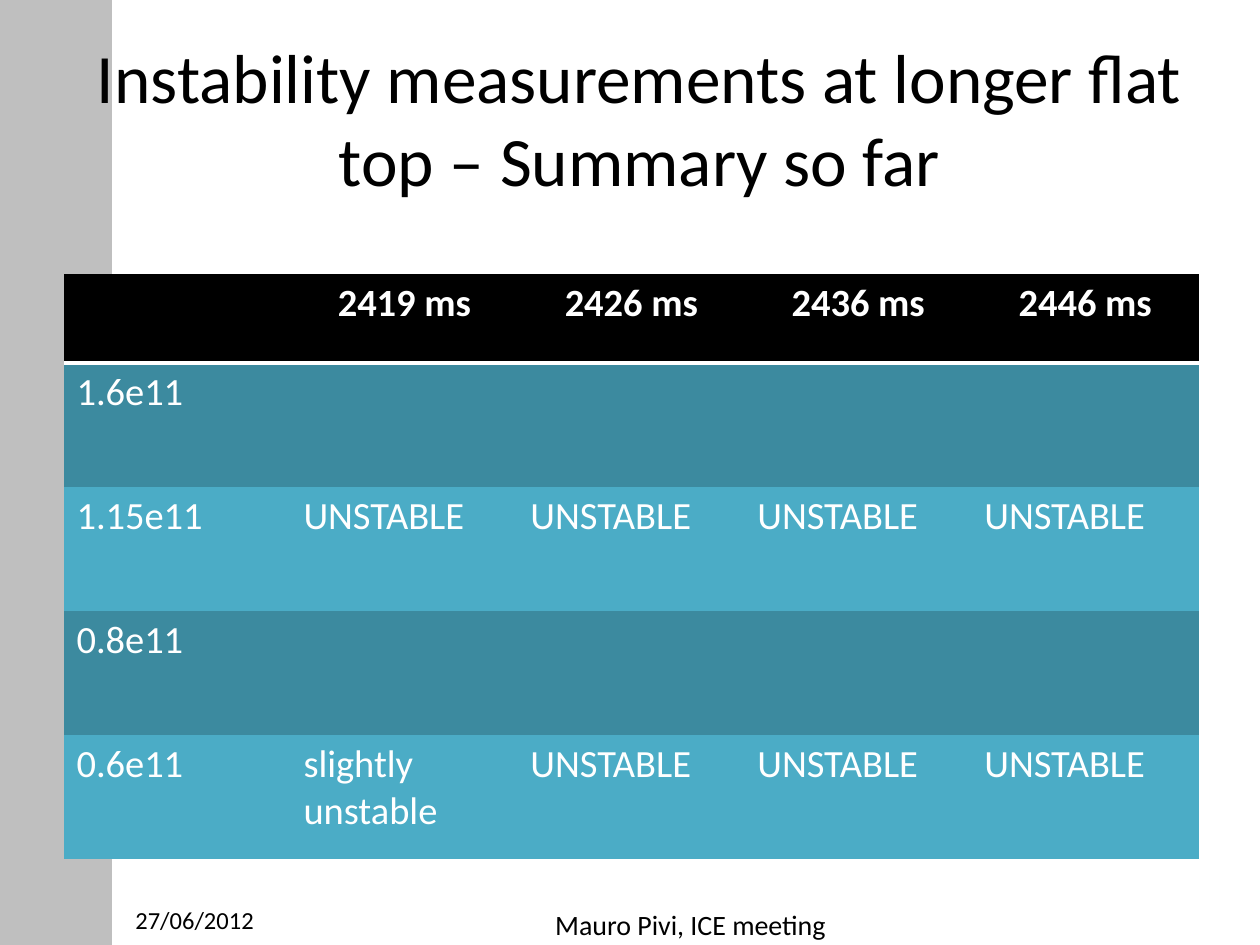
from lxml import etree
from pptx import Presentation
from pptx import util as u
from pptx.dml.color import RGBColor
from pptx.enum import shapes, text
from pptx.oxml.ns import qn

PX = u.Inches(1) // 126
COLORS = {"ink": "000000", "paper": "FFFFFF", "band": "BFBFBF",
          "dark": "3C8A9F", "light": "4BACC6"}
NO_GRID = "{2D5ABB26-0587-4C30-8999-92F81FD0307C}"
LEFT, CENTER = text.PP_ALIGN.LEFT, text.PP_ALIGN.CENTER


def rgb(name):
    return RGBColor.from_string(COLORS[name])


def write(tf, content, size=22, color="ink", bold=False, align=LEFT):
    p = tf.paragraphs[0]
    p.alignment = align
    r = p.add_run()
    r.text = content
    r.font.name = "Calibri"
    r.font.size = u.Pt(size)
    r.font.bold = bold
    r.font.color.rgb = rgb(color)


class Deck:
    def __init__(self, width, height):
        self.prs = Presentation()
        self.prs.slide_width, self.prs.slide_height = width * PX, height * PX
        self.s = self.prs.slides.add_slide(self.prs.slide_layouts[6])

    def rect(self, *box, fill):
        sp = self.s.shapes.add_shape(shapes.MSO_SHAPE.RECTANGLE, *(v * PX for v in box))
        sp.shadow.inherit = False
        sp.fill.solid()
        sp.fill.fore_color.rgb = rgb(fill)
        sp.line.fill.background()

    def label(self, *box, content, **style):
        tf = self.s.shapes.add_textbox(*(v * PX for v in box)).text_frame
        tf.word_wrap = True
        tf.vertical_anchor = text.MSO_ANCHOR.MIDDLE
        write(tf, content, **style)

    def bottom_border(self, cell, color, width):
        ln = etree.Element(qn("a:lnB"), w=str(u.Pt(width)))
        fill = etree.SubElement(ln, qn("a:solidFill"))
        etree.SubElement(fill, qn("a:srgbClr"), val=COLORS[color])
        cell._tc.get_or_add_tcPr().insert(0, ln)

    def table(self, left, top, rows, col_width, heights):
        frame = self.s.shapes.add_table(len(rows), len(rows[0]), left * PX, top * PX,
                                        col_width * len(rows[0]) * PX, sum(heights) * PX)
        next(frame.element.iter(qn("a:tableStyleId"))).text = NO_GRID
        table = frame.table
        for col in table.columns:
            col.width = col_width * PX
        for i, row in enumerate(rows):
            table.rows[i].height = heights[i] * PX
            header = i == 0
            fill = "ink" if header else ("light", "dark")[i % 2]
            for j, content in enumerate(row):
                cell = table.cell(i, j)
                cell.fill.solid()
                cell.fill.fore_color.rgb = rgb(fill)
                if header:
                    self.bottom_border(cell, "paper", 2)
                if content:
                    write(cell.text_frame, content, color="paper", bold=header,
                          align=CENTER if header else LEFT)


def main():
    deck = Deck(1260, 945)

    # Side band and title
    deck.rect(0, 0, 112, 945, fill="band")
    deck.label(63, 38, 1153, 158, size=39.6, align=CENTER,
               content="Instability measurements at longer flat top – Summary so far")

    # Stability by intensity (rows) and time (columns)
    blank, unstable = [""] * 4, ["UNSTABLE"] * 4
    rows = [
        ["", "2419 ms", "2426 ms", "2436 ms", "2446 ms"],
        ["1.6e11", *blank],
        ["1.15e11", *unstable],
        ["0.8e11", *blank],
        ["0.6e11", "slightly unstable", *unstable[1:]],
    ]
    deck.table(64, 274, rows, col_width=227, heights=[89] + [124] * 4)

    # Footer
    deck.label(123, 895, 294, 50, content="27/06/2012", size=14)
    deck.label(491, 899, 399, 50, content="Mauro Pivi, ICE meeting", size=16, align=CENTER)

    deck.prs.save("out.pptx")


if __name__ == "__main__":
    main()
